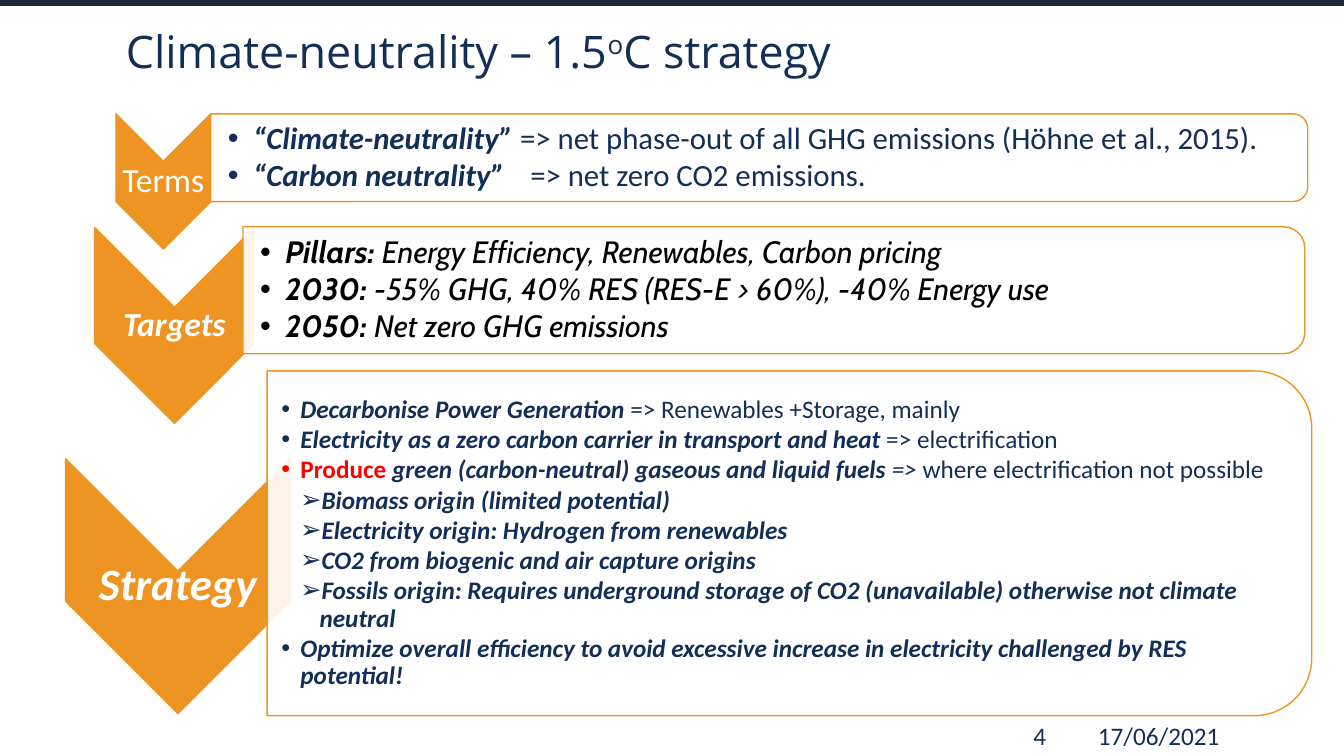
from lxml import etree
from pptx import Presentation
from pptx.dml.color import RGBColor
from pptx.enum import shapes, text
from pptx.oxml.ns import qn
from pptx.util import Inches, Pt

NAVY, ORANGE, RED, WHITE, BLACK = "132E57", "ED9423", "FF0000", "FFFFFF", "000000"
TOP_BAR = "1E2A39"

STRONG = {"bold": True, "italic": True}
PLAIN = {"bold": False, "italic": False}
SLANTED = {"bold": False, "italic": True}
ALERT = {"bold": True, "italic": False, "color": RED}

TITLE = [("Climate-neutrality – 1.5", {}), ("o", {"baseline": "30000"}), ("C strategy", {})]

# Frames are left, top, width, height in inches; lines are (level, runs).
STAGES = [
    {
        "label": "Terms", "label_format": {"size": 24, **PLAIN},
        "arrow": (1.15, 1.13, 0.94, 1.34), "panel": (2.09, 1.13, 10.88, 0.87),
        "body": {"font": "Calibri", "size": 22, "color": NAVY},
        "indent": 0.25, "inset": 0.17,
        "lines": [
            (1, [("“Climate-neutrality” ", STRONG),
                 ("=> net phase-out of all GHG emissions (Höhne et al., 2015).", PLAIN)]),
            (1, [("“Carbon neutrality” \t", STRONG), ("=> net zero CO2 emissions.", PLAIN)]),
        ],
    },
    {
        "label": "Targets", "label_format": {"size": 24, **STRONG},
        "arrow": (0.94, 2.26, 1.58, 1.94), "panel": (2.41, 2.25, 10.53, 1.26),
        "body": {"font": "Cabin", "size": 22, "color": BLACK},
        "indent": 0.25, "inset": 0.17,
        "lines": [
            (1, [("Pillars: ", STRONG),
                 ("Energy Efficiency, Renewables, Carbon pricing", SLANTED)]),
            (1, [("2030: ", STRONG),
                 ("-55% GHG, 40% RES (RES-E > 60%), -40% Energy use", SLANTED)]),
            (1, [("2050: ", STRONG), ("Net zero GHG emissions", SLANTED)]),
        ],
    },
    {
        "label": "Strategy", "label_format": {"size": 32, **STRONG},
        "arrow": (0.65, 4.55, 2.23, 2.53), "panel": (2.65, 3.68, 10.36, 3.42),
        "body": {"font": "Calibri", "size": 18, "color": NAVY},
        "indent": 0.19, "inset": 0.14,
        "lines": [
            (1, [("Decarbonise Power Generation", STRONG),
                 (" => Renewables +Storage, mainly", PLAIN)]),
            (1, [("Electricity as a zero carbon carrier in transport and heat\t", STRONG),
                 ("=> electrification", PLAIN)]),
            (1, [("Produce ", ALERT),
                 ("green (carbon-neutral) gaseous and liquid fuels ", STRONG),
                 ("=>", SLANTED), (" where electrification not possible", PLAIN)]),
            (2, [("Biomass origin (limited potential)", STRONG)]),
            (2, [("Electricity origin: Hydrogen from renewables", STRONG)]),
            (2, [("CO2 from biogenic and air capture origins", STRONG)]),
            (2, [("Fossils origin: Requires underground storage of CO2 (unavailable) "
                  "otherwise not climate neutral", STRONG)]),
            (1, [("Optimize overall efficiency to avoid excessive increase in electricity "
                  "challenged by RES potential!", STRONG)]),
        ],
    },
]
FOOTER = [("17/06/2021", 10.79), ("4", 10.15)]

BULLETS = {1: "•", 2: "➢"}
CORNER = 0.1667   # corner radius as a share of the panel's short side
CORNER_GAP = 0.29  # share of the radius that text keeps clear of


def rgb(value):
    return RGBColor.from_string(value)


def add_block(kind, frame, fill, line, turned=False):
    """Add a preset shape; a turned one fills its frame after a quarter turn."""
    left, top, width, height = frame
    if turned:
        left, top = left + (width - height) / 2, top + (height - width) / 2
        width, height = height, width
    block = slide.shapes.add_shape(kind, *map(Inches, (left, top, width, height)))
    block.rotation = 90 if turned else 0
    block.shadow.inherit = False
    block.fill.solid()
    block.fill.fore_color.rgb = rgb(fill)
    block.line.color.rgb = rgb(line)
    block.line.width = Pt(1)
    return block


def add_text_frame(frame, insets=(0.1, 0.05, 0.1, 0.05), anchor=text.MSO_ANCHOR.MIDDLE):
    text_frame = slide.shapes.add_textbox(*map(Inches, frame)).text_frame
    text_frame.word_wrap = True
    text_frame.vertical_anchor = anchor
    for side, inset in zip(("left", "top", "right", "bottom"), insets):
        setattr(text_frame, "margin_" + side, Inches(inset))
    return text_frame


def add_runs(paragraph, runs, base):
    for words, changes in runs:
        look = {**base, **changes}
        run = paragraph.add_run()
        run.text = words
        settings = {"name": look["font"], "size": Pt(look["size"]),
                    "bold": look.get("bold"), "italic": look.get("italic")}
        for key, value in settings.items():
            setattr(run.font, key, value)
        run.font.color.rgb = rgb(look["color"])
        if "baseline" in look:
            run.font._element.set("baseline", look["baseline"])


def add_bullet(paragraph, level, indent):
    properties = paragraph._p.get_or_add_pPr()
    properties.set("marL", str(Inches(level * indent)))
    properties.set("indent", str(-Inches(indent)))
    etree.SubElement(properties, qn("a:buFont")).set("typeface", "Arial")
    etree.SubElement(properties, qn("a:buChar")).set("char", BULLETS[level])


def add_stage(stage):
    left, top, width, height = stage["arrow"]
    add_block(shapes.MSO_SHAPE.CHEVRON, stage["arrow"], ORANGE, ORANGE, turned=True)
    label = add_text_frame((left, top + width / 2, width, height - width), [0.02] * 4)
    heading = label.paragraphs[0]
    heading.alignment = text.PP_ALIGN.CENTER
    heading.line_spacing = 0.9
    add_runs(heading, [(stage["label"], {})],
             {"font": "Calibri", "color": WHITE, **stage["label_format"]})

    left, top, width, height = stage["panel"]
    panel = add_block(shapes.MSO_SHAPE.ROUND_2_SAME_RECTANGLE, stage["panel"],
                      WHITE, ORANGE, turned=True)
    fill_color = panel._element.spPr.find(qn("a:solidFill"))[0]
    etree.SubElement(fill_color, qn("a:alpha")).set("val", "90000")

    gap = height * CORNER * CORNER_GAP
    body = add_text_frame((left, top + gap, width - gap, height - 2 * gap),
                          (stage["inset"], 0.02, 0.02, 0.02))
    for number, (level, runs) in enumerate(stage["lines"]):
        paragraph = body.add_paragraph() if number else body.paragraphs[0]
        paragraph.line_spacing = 0.9
        paragraph.space_after = Pt(stage["body"]["size"] * 0.12)
        add_bullet(paragraph, level, stage["indent"])
        add_runs(paragraph, runs, stage["body"])


deck = Presentation()
deck.slide_width, deck.slide_height = Inches(13.33), Inches(7.5)
slide = deck.slides.add_slide(deck.slide_layouts[6])

add_block(shapes.MSO_SHAPE.RECTANGLE, (0, 0, 13.33, 0.05), TOP_BAR, TOP_BAR)
title = add_text_frame((1.15, 0.15, 11.92, 0.77)).paragraphs[0]
title.line_spacing = 0.9
add_runs(title, TITLE, {"font": "Open Sans", "size": 32, "color": NAVY})

for stage in STAGES:
    add_stage(stage)

for words, left in FOOTER:
    note = add_text_frame((left, 7.1, 3, 0.4), anchor=text.MSO_ANCHOR.TOP)
    add_runs(note.paragraphs[0], [(words, {})],
             {"font": "Calibri", "size": 18, "color": NAVY})

deck.save("out.pptx")
